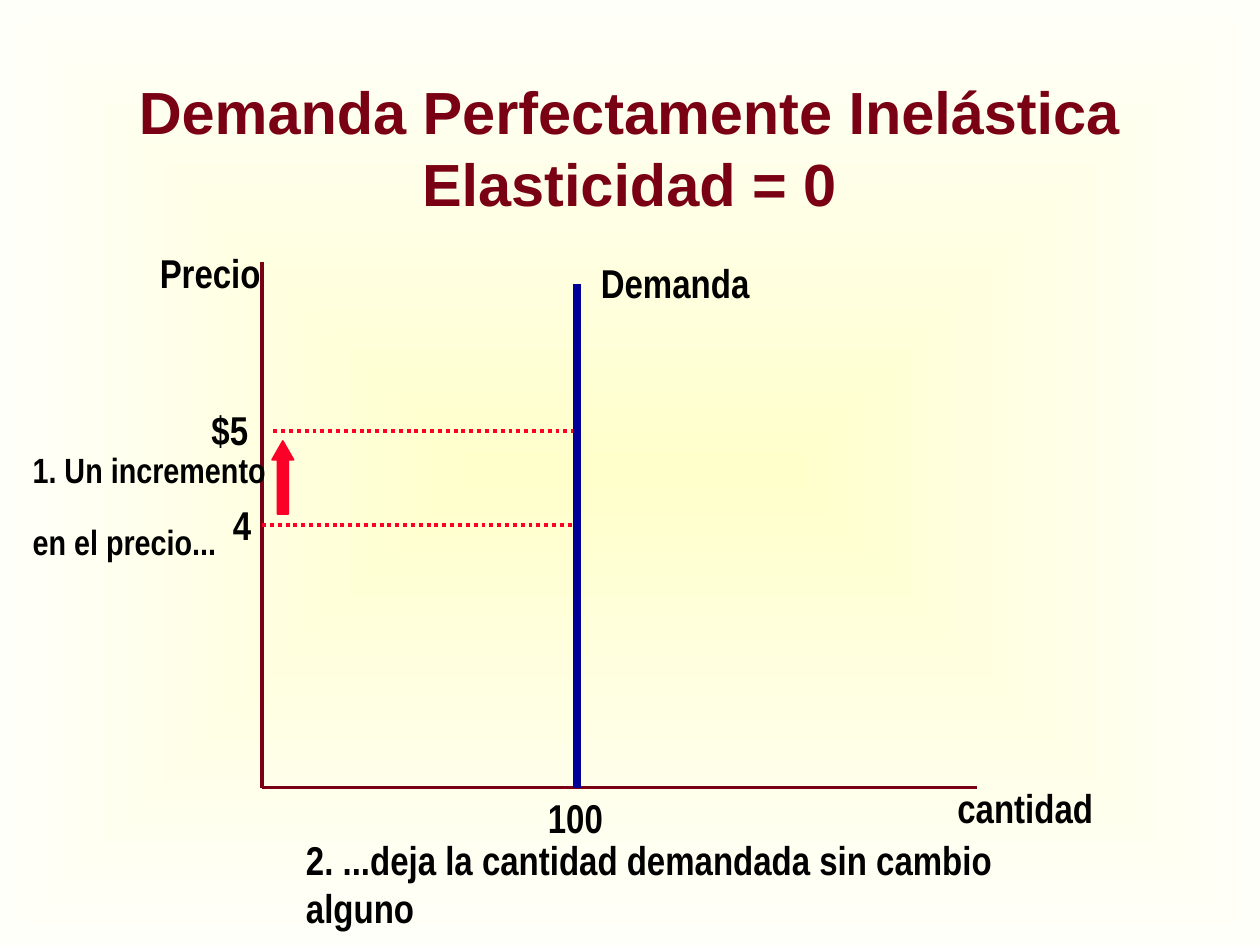
from lxml.etree import SubElement
from pptx import Presentation
from pptx.dml.color import RGBColor
from pptx.enum.dml import MSO_LINE_DASH_STYLE as Dash
from pptx.enum.shapes import MSO_CONNECTOR as Connector, MSO_SHAPE as Shape
from pptx.enum.text import MSO_ANCHOR as Anchor, PP_ALIGN as Align
from pptx.oxml.ns import qn
from pptx.util import Inches, Pt

COLORS = {
    "center": "FFFFCC",
    "edge": "FFFFFA",
    "title": "7A0014",
    "axis": "790015",
    "price": "FC0128",
    "demand": "000099",
    "text": "000000",
}
ORIGIN_X, ORIGIN_Y = 2.08, 6.25
DEMAND_X = 4.58


def rgb(name):
    """Return the named palette colour."""
    return RGBColor.from_string(COLORS[name])


def paint_background(slide):
    """Fill the background with a gradient spreading from the centre."""
    fill = slide.background.fill
    fill.gradient()
    for stop, name, position in zip(fill.gradient_stops, ("center", "edge"), (0, 1)):
        stop.color.rgb = rgb(name)
        stop.position = position
    gradient = slide.background._cSld.find(".//" + qn("a:gradFill"))
    gradient.remove(gradient.find(qn("a:lin")))
    spread = SubElement(gradient, qn("a:path"), {"path": "shape"})
    SubElement(spread, qn("a:fillToRect"), dict.fromkeys("ltrb", "50000"))


def add_text(paragraph, text, size, font, color):
    """Add one bold run to a paragraph."""
    run = paragraph.add_run()
    run.text = text
    run.font.size = Pt(size)
    run.font.name = font
    run.font.bold = True
    run.font.color.rgb = rgb(color)


def write_title(slide, lines):
    """Place the title and write its centred lines."""
    title = slide.shapes.title
    title.left, title.top = Inches(0.33), Inches(0.58)
    title.width, title.height = Inches(9.33), Inches(1.17)
    title.text_frame.vertical_anchor = Anchor.MIDDLE
    paragraph = title.text_frame.paragraphs[0]
    paragraph.alignment = Align.CENTER
    for index, line in enumerate(lines):
        if index:
            paragraph.add_line_break()
        add_text(paragraph, line, 34, "Arial", "title")


def add_label(slide, text, left, top, width, height=0.48, wrap=False):
    """Add a single-paragraph label."""
    label = slide.shapes.add_textbox(
        Inches(left), Inches(top), Inches(width), Inches(height))
    label.text_frame.word_wrap = wrap
    add_text(label.text_frame.paragraphs[0], text, 23, "Arial Narrow", "text")


def add_price_note(slide, lines):
    """Add the note on the price rise, one spaced paragraph per line."""
    note = slide.shapes.add_textbox(
        Inches(0.16), Inches(3.28), Inches(2.11), Inches(1.23)).text_frame
    note.word_wrap = True
    note.margin_top = Inches(0.33)
    note.margin_right = 0
    for index, line in enumerate(lines):
        paragraph = note.add_paragraph() if index else note.paragraphs[0]
        paragraph.line_spacing = 0.85
        paragraph.space_before = Pt(21 if index else 0)
        add_text(paragraph, line, 20, "Arial Narrow", "text")


def add_line(slide, start, end, color, width=2.25, dash=None):
    """Draw a straight line between two points."""
    line = slide.shapes.add_connector(
        Connector.STRAIGHT, *map(Inches, start), *map(Inches, end))
    line.line.color.rgb = rgb(color)
    line.line.width = Pt(width)
    if dash:
        line.line.dash_style = dash
    SubElement(line._element.spPr, qn("a:effectLst"))


def add_rise_arrow(slide):
    """Draw the arrow from the old price up to the new one."""
    arrow = slide.shapes.add_shape(
        Shape.UP_ARROW, Inches(2.16), Inches(3.5), Inches(0.17), Inches(0.58))
    arrow.adjustments[0], arrow.adjustments[1] = 0.5, 0.875
    arrow.shadow.inherit = False
    arrow.fill.solid()
    arrow.fill.fore_color.rgb = rgb("price")
    arrow.line.color.rgb = rgb("price")
    arrow.line.width = Pt(1)


def main():
    """Build the slide on perfectly inelastic demand."""
    deck = Presentation()
    deck.slide_width, deck.slide_height = Inches(10), Inches(7.5)
    slide = deck.slides.add_slide(deck.slide_layouts[5])
    paint_background(slide)
    write_title(slide, ("Demanda Perfectamente Inelástica", "Elasticidad = 0"))

    origin = (ORIGIN_X, ORIGIN_Y)
    for axis_end in ((ORIGIN_X, 2.08), (7.75, ORIGIN_Y)):
        add_line(slide, origin, axis_end, "axis")
    for start_x, price_y in ((ORIGIN_X, 4.17), (2.17, 3.42)):
        add_line(slide, (start_x, price_y), (DEMAND_X, price_y), "price",
                 dash=Dash.ROUND_DOT)
    add_line(slide, (DEMAND_X, ORIGIN_Y), (DEMAND_X, 2.25), "demand", 4.5)

    for text, left, top, width in (
        ("cantidad", 7.5, 6.17, 1.28),
        ("Precio", 1.17, 1.92, 1),
        ("4", 1.75, 3.92, 0.35),
        ("$5", 1.58, 3.17, 0.49),
        ("Demanda", 4.67, 2, 1.38),
        ("100", 4.25, 6.25, 0.64),
    ):
        add_label(slide, text, left, top, width)
    add_label(slide, "2. ...deja la cantidad demandada sin cambio alguno",
              2.33, 6.58, 6.5, 0.87, wrap=True)
    add_price_note(slide, ("1. Un incremento", "en el precio..."))
    add_rise_arrow(slide)
    deck.save("out.pptx")


if __name__ == "__main__":
    main()
